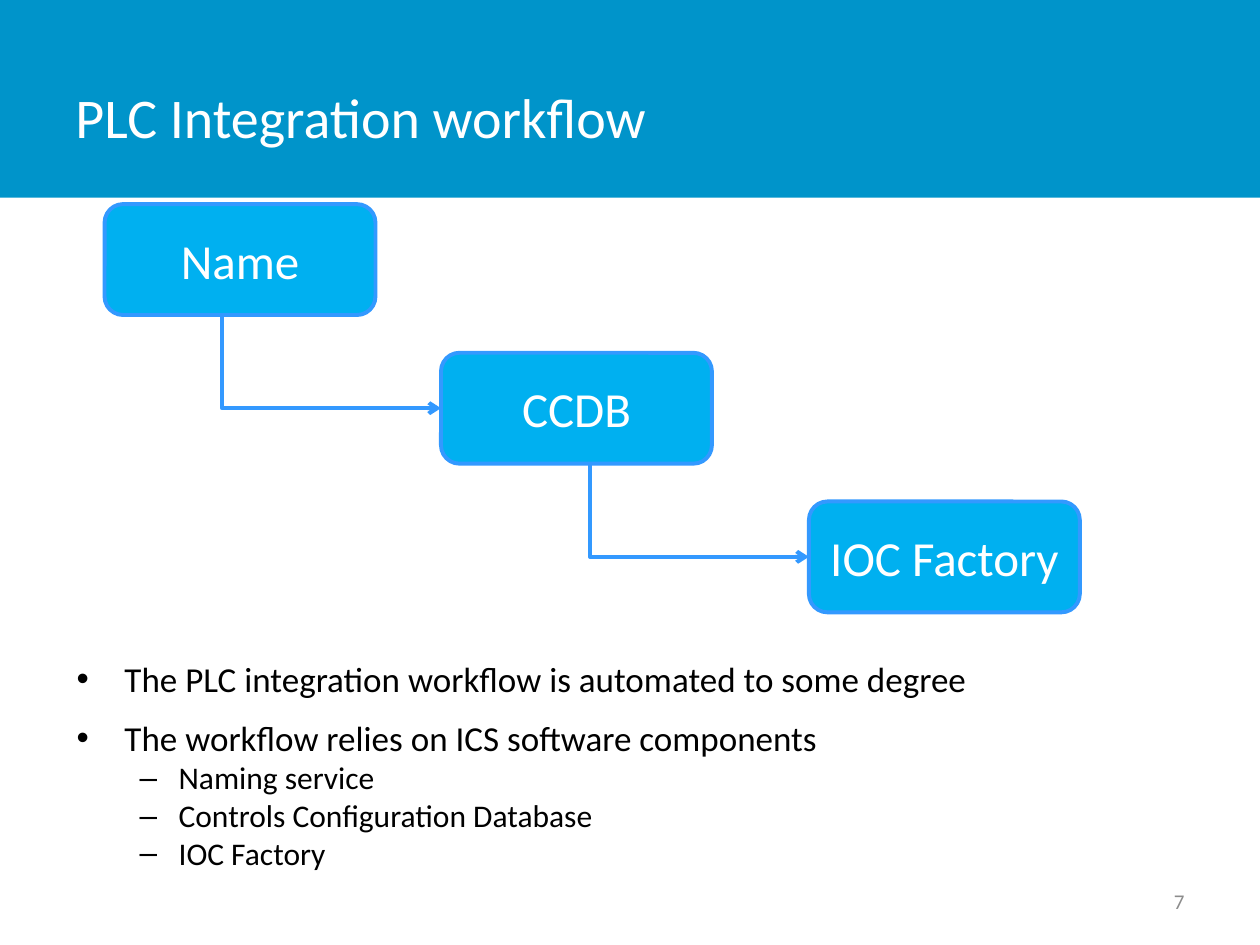
from dataclasses import dataclass

from lxml import etree
from pptx import Presentation
from pptx.dml.color import RGBColor
from pptx.enum.shapes import MSO_CONNECTOR, MSO_SHAPE
from pptx.enum.text import MSO_ANCHOR, PP_ALIGN
from pptx.oxml.ns import qn
from pptx.util import Inches, Pt

RECTANGLE, ROUNDED = MSO_SHAPE.RECTANGLE, MSO_SHAPE.ROUNDED_RECTANGLE
ELBOW = MSO_CONNECTOR.ELBOW
TOP, MIDDLE = MSO_ANCHOR.TOP, MSO_ANCHOR.MIDDLE
LEFT, CENTER, RIGHT = PP_ALIGN.LEFT, PP_ALIGN.CENTER, PP_ALIGN.RIGHT


@dataclass(frozen=True)
class Theme:
    """Colours, type sizes and line width of the deck."""

    font: str = "Calibri"
    banner: str = "0094CA"
    step: str = "00B0F0"
    line: str = "3399FF"
    light: str = "FFFFFF"
    dark: str = "000000"
    muted: str = "8C8C8C"
    title_size: int = 32
    step_size: int = 28
    bullet_size: int = 20
    dash_size: int = 18
    number_size: int = 12
    line_width: float = 2.25


class Page:
    """Draws each kind of element on one slide in the given theme."""

    def __init__(self, slide, theme):
        self.shapes = slide.shapes
        self.theme = theme

    def add_span(self, para, text, size, color, align=LEFT):
        """Fill a paragraph with one styled run."""
        para.alignment = align
        span = para.add_run()
        span.text = text
        for name, value in {"name": self.theme.font, "size": Pt(size)}.items():
            setattr(span.font, name, value)
        span.font.color.rgb = RGBColor.from_string(color)

    def text_box(self, place, anchor=TOP):
        """Add a wrapping text box and return its frame."""
        frame = self.shapes.add_textbox(*map(Inches, place)).text_frame
        for name, value in {"word_wrap": True, "vertical_anchor": anchor}.items():
            setattr(frame, name, value)
        return frame

    def label(self, place, text, size, color, align=LEFT):
        """Add a single line of text, centred vertically."""
        frame = self.text_box(place, MIDDLE)
        self.add_span(frame.paragraphs[0], text, size, color, align)

    def block(self, kind, place, fill):
        """Add a filled preset shape without outline or shadow."""
        shape = self.shapes.add_shape(kind, *map(Inches, place))
        shape.shadow.inherit = False
        shape.fill.solid()
        shape.fill.fore_color.rgb = RGBColor.from_string(fill)
        shape.line.fill.background()
        return shape

    def outline(self, line):
        """Give a line the theme's colour and width."""
        line.color.rgb = RGBColor.from_string(self.theme.line)
        line.width = Pt(self.theme.line_width)

    def step(self, place, text):
        """Add one workflow step."""
        box = self.block(ROUNDED, place, self.theme.step)
        self.outline(box.line)
        box.text_frame.vertical_anchor = MIDDLE
        para = box.text_frame.paragraphs[0]
        self.add_span(para, text, self.theme.step_size, self.theme.light, CENTER)

    def arrow(self, start, end):
        """Add an elbow arrow that goes down and then right."""
        link = self.shapes.add_connector(ELBOW, *map(Inches, start + end))
        self.outline(link.line)
        properties = link._element.spPr
        guides = properties.find(qn("a:prstGeom")).get_or_add_avLst()
        etree.SubElement(guides, qn("a:gd"), name="adj1", fmla="val -500")
        etree.SubElement(properties.find(qn("a:ln")), qn("a:tailEnd"), type="arrow")
        etree.SubElement(properties, qn("a:effectLst"))

    def bullets(self, place, items):
        """Add a two-level list from (level, text, line spacing) items."""
        levels = (
            ("•", 0.38, -0.38, self.theme.bullet_size),
            ("–", 0.81, -0.31, self.theme.dash_size),
        )
        frame = self.text_box(place)
        for index, (level, text, spacing) in enumerate(items):
            para = frame.add_paragraph() if index else frame.paragraphs[0]
            mark, margin, indent, size = levels[level]
            properties = para._p.get_or_add_pPr()
            for name, value in {"marL": margin, "indent": indent}.items():
                properties.set(name, str(Inches(value)))
            etree.SubElement(properties, qn("a:buFont"), typeface="Arial")
            etree.SubElement(properties, qn("a:buChar"), char=mark)
            for name, value in {"level": level, "line_spacing": spacing}.items():
                setattr(para, name, value)
            self.add_span(para, text, size, self.theme.dark)


def main():
    """Build the workflow slide and save it."""
    deck = Presentation()
    deck.slide_width, deck.slide_height = Inches(10), Inches(7.5)
    theme = Theme()
    page = Page(deck.slides.add_slide(deck.slide_layouts[6]), theme)

    page.block(RECTANGLE, (0, 0, 10, 1.57), theme.banner)
    page.label((0.5, 0.3, 7.81, 1.25), "PLC Integration workflow",
               theme.title_size, theme.light)
    page.bullets((0.51, 5.17, 9, 1.81), (
        (0, "The PLC integration workflow is automated to some degree", 1.0),
        (0, "The workflow relies on ICS software components", 1.4),
        (1, "Naming service", 1.0),
        (1, "Controls Configuration Database", 1.0),
        (1, "IOC Factory", 1.0),
    ))
    page.label((7.17, 6.95, 2.33, 0.4), "7", theme.number_size, theme.muted, RIGHT)

    width, height, first_top, drop, run = 2.15, 0.88, 1.62, 1.18, 1.73
    steps = (("Name", 0.83), ("CCDB", 3.5), ("IOC Factory", 6.42))
    tops = [first_top + drop * index for index in range(len(steps))]
    for (text, left), top in zip(steps, tops):
        page.step((left, top, width, height), text)
    for (_, left), top in zip(steps[1:], tops[1:]):
        page.arrow((left - run, top - drop + height), (left, top + height / 2))

    deck.save("out.pptx")


if __name__ == "__main__":
    main()
